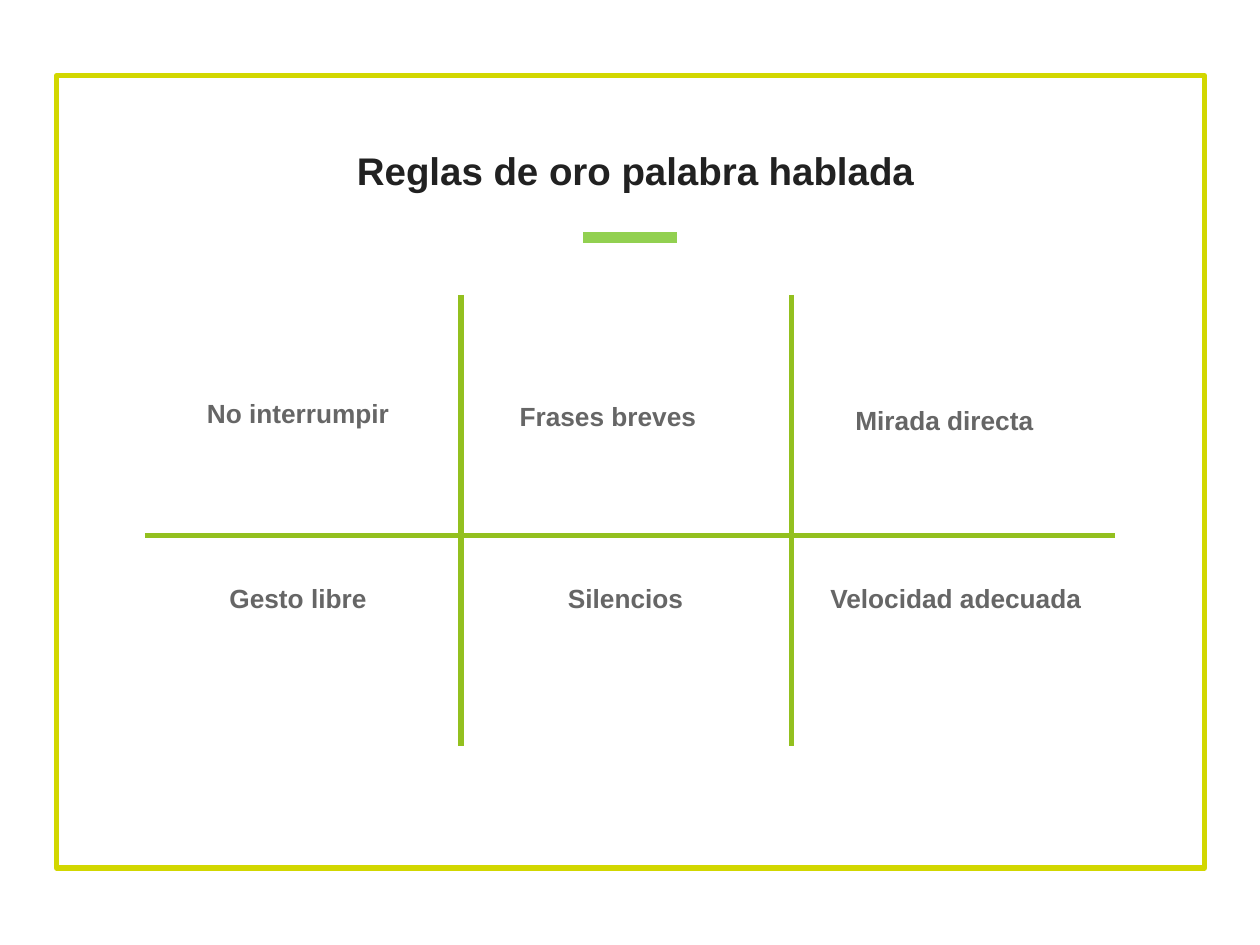
from dataclasses import dataclass

from lxml import etree
from pptx import Presentation
from pptx.dml.color import RGBColor
from pptx.enum.shapes import MSO_CONNECTOR, MSO_SHAPE
from pptx.enum.text import MSO_ANCHOR, PP_ALIGN
from pptx.oxml.ns import qn
from pptx.util import Pt

RECTANGLE = MSO_SHAPE.RECTANGLE
STRAIGHT = MSO_CONNECTOR.STRAIGHT
BOTTOM = MSO_ANCHOR.BOTTOM
CENTER = PP_ALIGN.CENTER
BLANK_LAYOUT = 6


@dataclass(frozen=True)
class Theme:
    font: str = "Arial"
    frame: str = "D2D700"
    grid: str = "93C01F"
    accent: str = "92D050"
    title: str = "212121"
    label: str = "666666"
    title_size: float = 22
    label_size: float = 15
    rule_width: float = 3
    accent_width: float = 6
    inset: float = 7.2


def write_text(text_frame, text, *, font, size, color, bold=True, align=CENTER):
    paragraph = text_frame.paragraphs[0]
    paragraph.alignment = align
    run = paragraph.add_run()
    run.text = text
    run.font.name = font
    run.font.size = Pt(size)
    run.font.bold = bold
    run.font.color.rgb = RGBColor.from_string(color)


class SlideBuilder:
    def __init__(self, slide, theme):
        self.slide = slide
        self.theme = theme

    def frame(self, left, top, width, height):
        shape = self.slide.shapes.add_shape(
            RECTANGLE, Pt(left), Pt(top), Pt(width), Pt(height))
        shape.shadow.inherit = False
        shape.fill.background()
        shape.line.color.rgb = RGBColor.from_string(self.theme.frame)
        shape.line.width = Pt(self.theme.rule_width)

    def text(self, text, left, top, width, height, size, color):
        shape = self.slide.shapes.add_textbox(
            Pt(left), Pt(top), Pt(width), Pt(height))
        text_frame = shape.text_frame
        text_frame.word_wrap = True
        text_frame.vertical_anchor = BOTTOM
        text_frame.margin_left = text_frame.margin_right = Pt(self.theme.inset)
        text_frame.margin_top = text_frame.margin_bottom = Pt(self.theme.inset)
        write_text(text_frame, text, font=self.theme.font, size=size, color=color)

    def line(self, start, end, color, width):
        connector = self.slide.shapes.add_connector(
            STRAIGHT, *(Pt(value) for value in (*start, *end)))
        connector.line.color.rgb = RGBColor.from_string(color)
        connector.line.width = Pt(width)
        properties = connector._element.find(qn("p:spPr"))
        etree.SubElement(properties, qn("a:effectLst"))


def main():
    theme = Theme()
    presentation = Presentation()
    presentation.slide_width = Pt(720)
    presentation.slide_height = Pt(540)
    slide = presentation.slides.add_slide(presentation.slide_layouts[BLANK_LAYOUT])
    builder = SlideBuilder(slide, theme)

    builder.frame(32.4, 43.2, 655.9, 452.9)
    builder.text("Reglas de oro palabra hablada", 61.2, 67, 604.1, 50.4,
                 theme.title_size, theme.title)

    rules = [
        ("No interrumpir", 87.1, 184.3),
        ("Frases breves", 264.2, 186.5),
        ("Mirada directa", 456.5, 188.6),
        ("Gesto libre", 87.1, 290.2),
        ("Silencios", 274.3, 290.2),
        ("Velocidad adecuada", 463, 290.2),
    ]
    for rule, left, top in rules:
        builder.text(rule, left, top, 166.3, 67.7, theme.label_size, theme.label)

    for x in (263.5, 452.2):
        builder.line((x, 168.5), (x, 426.2), theme.grid, theme.rule_width)
    builder.line((333.4, 135.7), (386.6, 135.7), theme.accent, theme.accent_width)
    builder.line((82.8, 306), (637.2, 306), theme.grid, theme.rule_width)

    presentation.save("out.pptx")


if __name__ == "__main__":
    main()
